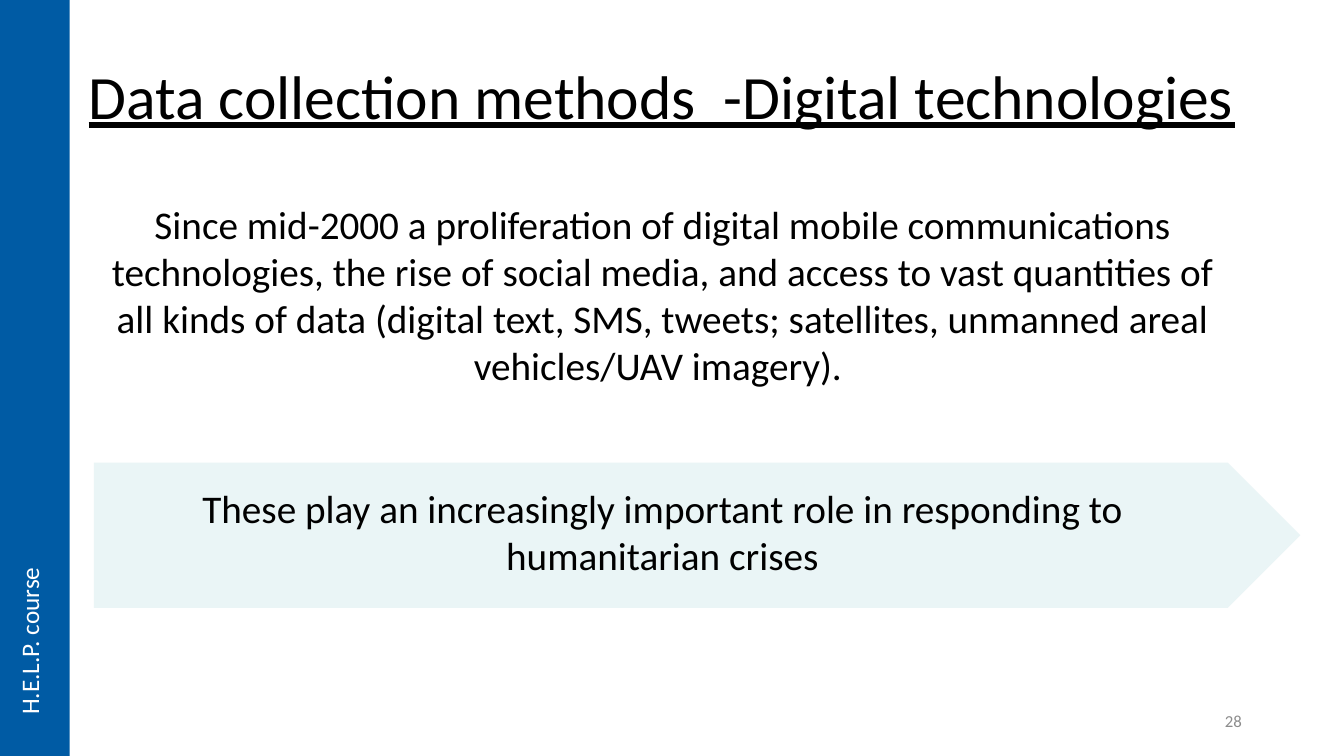
from dataclasses import dataclass

from pptx import Presentation
from pptx.dml.color import RGBColor
from pptx.enum.shapes import MSO_SHAPE
from pptx.enum.text import MSO_ANCHOR, PP_ALIGN
from pptx.slide import Slide
from pptx.util import Inches, Length, Pt

SLIDE_W, SLIDE_H = Inches(13.333), Inches(7.5)


@dataclass(frozen=True)
class Theme:
    font: str = "Calibri"
    ink: str = "000000"
    paper: str = "FFFFFF"
    muted: str = "8C8C8C"
    band: str = "005BA4"
    arrow: str = "EAF5F6"
    title_size: int = 44
    body_size: int = 28
    label_size: int = 18
    number_size: int = 12


THEME = Theme()


@dataclass(frozen=True)
class Area:
    """Left, top, width and height as percentages of the slide."""
    x: float
    y: float
    w: float
    h: float

    def box(self) -> tuple[Length, ...]:
        return tuple(Length(int(total * share / 100)) for total, share in (
            (SLIDE_W, self.x), (SLIDE_H, self.y), (SLIDE_W, self.w), (SLIDE_H, self.h)))


@dataclass(frozen=True)
class Panel:
    area: Area
    kind: MSO_SHAPE
    fill: str
    adjustment: float | None = None


@dataclass(frozen=True)
class TextBlock:
    area: Area
    paragraphs: tuple[str, ...]
    size: int
    color: str = THEME.ink
    align: PP_ALIGN = PP_ALIGN.CENTER
    anchor: MSO_ANCHOR = MSO_ANCHOR.TOP
    underline: bool = False
    line_spacing: float = 1.0
    gap: float = 0
    upward: bool = False


def draw_panel(s: Slide, panel: Panel) -> None:
    sp = s.shapes.add_shape(panel.kind, *panel.area.box())
    sp.shadow.inherit = False
    sp.fill.solid()
    sp.fill.fore_color.rgb = RGBColor.from_string(panel.fill)
    sp.line.fill.background()
    if panel.adjustment is not None:
        sp.adjustments[0] = panel.adjustment


def draw_text(s: Slide, block: TextBlock) -> None:
    tf = s.shapes.add_textbox(*block.area.box()).text_frame
    tf.word_wrap = not block.upward
    tf.vertical_anchor = block.anchor
    if block.upward:
        tf._txBody.bodyPr.set("vert", "vert270")
    for i, text in enumerate(block.paragraphs):
        p = tf.add_paragraph() if i else tf.paragraphs[0]
        p.alignment = block.align
        p.line_spacing = block.line_spacing
        if i:
            p.space_before = Pt(block.gap)
        r = p.add_run()
        r.text = text
        r.font.name = THEME.font
        r.font.size = Pt(block.size)
        r.font.color.rgb = RGBColor.from_string(block.color)
        if block.underline:
            r.font.underline = True


# Side band and arrow behind the conclusion
PANELS = (
    Panel(Area(6.98, 61.2, 89.78, 19.2), MSO_SHAPE.PENTAGON, THEME.arrow, 0.5),
    Panel(Area(0, 0, 5.18, 100), MSO_SHAPE.RECTANGLE, THEME.band),
)

TEXTS = (
    # Title
    TextBlock(Area(2.55, 3.47, 93.38, 19.33),
              ("Data collection methods  -Digital technologies",),
              THEME.title_size, anchor=MSO_ANCHOR.MIDDLE, underline=True, line_spacing=0.9),
    # Statement and conclusion, two lines apart
    TextBlock(Area(6.98, 25.87, 84.6, 51.6),
              ("Since mid-2000 a proliferation of digital mobile communications technologies, "
               "the rise of social media, and access to vast quantities of all kinds of data "
               "(digital text, SMS, tweets; satellites, unmanned areal vehicles/UAV imagery). ",
               "These play an increasingly important role in responding to humanitarian crises"),
              THEME.body_size, gap=2 * 1.22 * THEME.body_size),
    # Slide number
    TextBlock(Area(70.65, 92.67, 22.5, 5.33), ("28",), THEME.number_size, THEME.muted,
              PP_ALIGN.RIGHT, MSO_ANCHOR.MIDDLE),
    # Course label on the band
    TextBlock(Area(0.68, 74.8, 3.75, 21.07), ("H.E.L.P. course",), THEME.label_size,
              THEME.paper, PP_ALIGN.LEFT, upward=True),
)


def main() -> None:
    prs = Presentation()
    prs.slide_width, prs.slide_height = SLIDE_W, SLIDE_H
    s = prs.slides.add_slide(prs.slide_layouts[6])
    for panel in PANELS:
        draw_panel(s, panel)
    for block in TEXTS:
        draw_text(s, block)
    prs.save("out.pptx")


if __name__ == "__main__":
    main()
